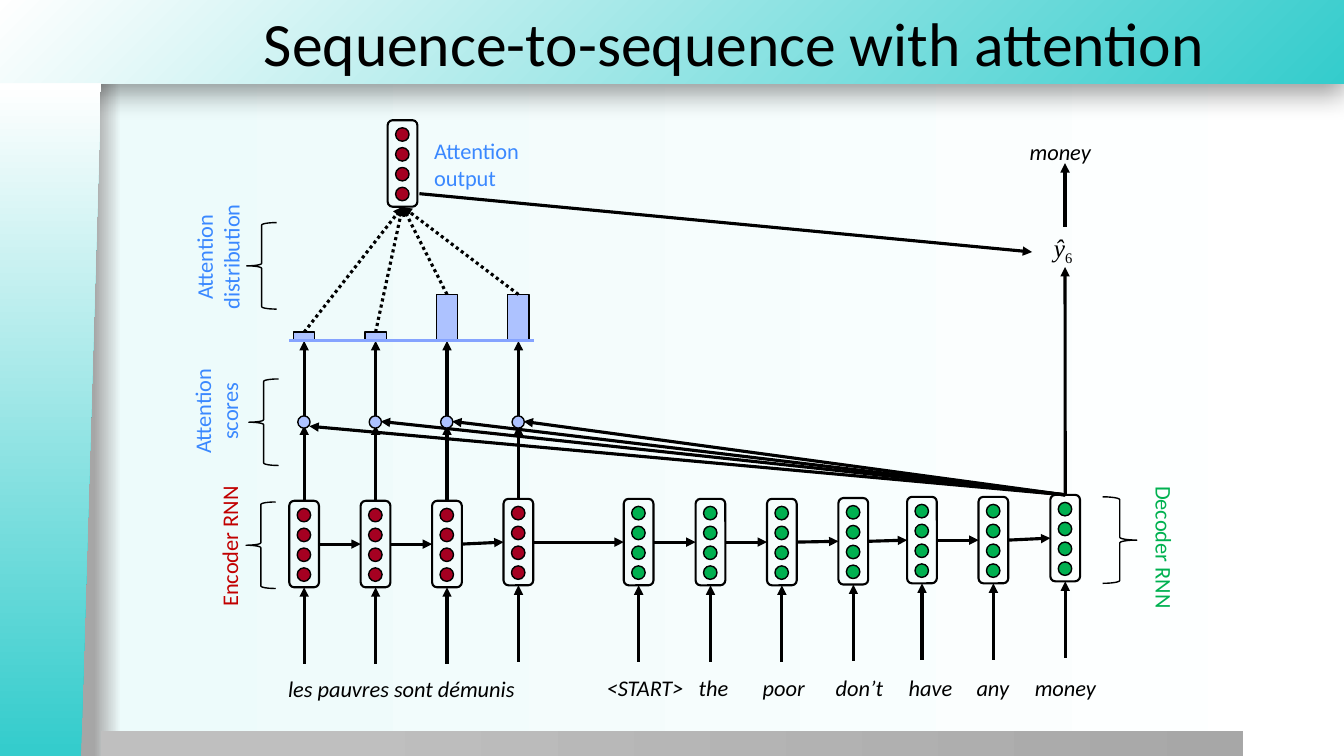
"""Build a slide explaining sequence-to-sequence translation with attention."""
from lxml.etree import SubElement
from pptx import Presentation
from pptx.dml.color import RGBColor
from pptx.enum.dml import MSO_LINE
from pptx.enum.shapes import MSO_CONNECTOR, MSO_SHAPE as SHAPE
from pptx.enum.text import MSO_ANCHOR as ANCHOR, PP_ALIGN as ALIGN
from pptx.oxml import parse_xml
from pptx.oxml.ns import nsdecls, qn
from pptx.util import Cm, Pt

COLORS = {
    "black": "000000", "white": "FFFFFF", "teal": "34CCCC", "mist": "EDFBFB",
    "shade": "A6A6A6", "silver": "BFBFBF", "gray": "A7A7A7",
    "encoder": "A50021", "decoder": "00B050", "encoder text": "C10000",
    "decoder text": "00B150", "attention": "3A88FF", "score": "ADC2FF", "axis": "85A3FF",
}
TOP, LEFT, BOTTOM, RIGHT = range(4)
BOX_WIDTH, BOX_HEIGHT = 0.75, 2.18
PITCH = 1.8

deck = Presentation()
deck.slide_width, deck.slide_height = Cm(33.87), Cm(19.05)
page = deck.slides.add_slide(deck.slide_layouts[6])


def draw(kind, left, top, width, height, fill=None, line="black", weight=1.0):
    shape = page.shapes.add_shape(kind, Cm(left), Cm(top), Cm(width), Cm(height))
    shape.shadow.inherit = False
    if fill:
        shape.fill.solid()
        shape.fill.fore_color.rgb = RGBColor.from_string(COLORS[fill])
    else:
        shape.fill.background()
    if line:
        shape.line.color.rgb = RGBColor.from_string(COLORS[line])
        shape.line.width = Pt(weight)
    else:
        shape.line.fill.background()
    return shape


def write(text, left, top, width, height, size=16, color="black", font="Calibri", italic=False,
          align=ALIGN.LEFT, anchor=ANCHOR.TOP, wrap=True, turn=0, subscript=""):
    box = page.shapes.add_textbox(Cm(left), Cm(top), Cm(width), Cm(height))
    box.rotation = turn
    frame = box.text_frame
    frame.word_wrap = wrap
    frame.vertical_anchor = anchor
    for number, content in enumerate(text.split("\n")):
        para = frame.add_paragraph() if number else frame.paragraphs[0]
        para.alignment = align
        for part in filter(None, (content, subscript)):
            span = para.add_run()
            span.text = part
            span.font.name, span.font.size = font, Pt(size)
            span.font.color.rgb = RGBColor.from_string(COLORS[color])
            span.font.italic = italic and part != subscript
            if part == subscript:
                span.font._element.set("baseline", "-25000")
    return box


page.background.fill.solid()
backdrop = page._element.find(".//" + qn("p:bgPr"))
banner = draw(SHAPE.RECTANGLE, -0.03, 0, 33.9, 2.11, "teal", None)
footer = draw(SHAPE.RECTANGLE, 2.54, 18.42, 28.78, 0.66, "gray", None)
side = draw(SHAPE.FLOWCHART_MANUAL_INPUT, -7.21, 9.32, 16.97, 2.54, "teal", None)
side.rotation = 270
side._element.spPr.xfrm.set("flipV", "1")

linear = '<a:lin ang="0" scaled="0"/>'
corner = '<a:path path="circle"><a:fillToRect l="100000" t="100000"/></a:path>'
for owner, stops, direction in (
    (backdrop, ((7, "shade"), (9, "mist"), (100, "white")), linear),
    (banner._element.spPr, ((0, "teal"), (100, "white")), corner),
    (footer._element.spPr, ((20, "silver"), (100, "gray")), linear),
    (side._element.spPr, ((1, "teal"), (100, "white")), linear),
):
    marks = "".join(f'<a:gs pos="{place * 1000}"><a:srgbClr val="{COLORS[name]}"/></a:gs>'
                    for place, name in stops)
    gradient = parse_xml(f'<a:gradFill {nsdecls("a")} rotWithShape="1">'
                         f'<a:gsLst>{marks}</a:gsLst>{direction}</a:gradFill>')
    owner.replace(owner.find(qn("a:solidFill")), gradient)

shadow = SubElement(banner._element.spPr.find(qn("a:effectLst")), qn("a:outerShdw"),
                    blurRad=str(Pt(20)), dist=str(Pt(6)), dir="5400000", rotWithShape="0")
shade = SubElement(shadow, qn("a:srgbClr"), val=COLORS["black"])
SubElement(shade, qn("a:alpha"), val="40000")

write("Sequence-to-sequence with attention", 6.4, 0, 27.5, 2.11, size=44, anchor=ANCHOR.MIDDLE)

encoder_tops = (12.62, 12.62, 12.62, 12.57)
decoder_lefts = (15.72, 17.53, 19.33, 21.13, 22.86, 24.66, 26.47)
decoder_tops = (12.57, 12.57, 12.57, 12.55, 12.52, 12.52, 12.47)
cells = [(7.29 + PITCH * step, top, "encoder") for step, top in enumerate(encoder_tops)]
cells += [(left, top, "decoder") for left, top in zip(decoder_lefts, decoder_tops)]
cells.append((9.77, 3.03, "encoder"))
boxes = []
for left, top, color in cells:
    boxes.append(draw(SHAPE.ROUNDED_RECTANGLE, left, top, BOX_WIDTH, BOX_HEIGHT, weight=1.5))
    for dot in range(4):
        draw(SHAPE.OVAL, left + 0.2, top + 0.19 + 0.5 * dot, 0.34, 0.34, color)
*states, output = boxes
last_state = states[-1]
centers = [left + BOX_WIDTH / 2 for left, top, color in cells]

arrows = []
for state, center, (left, top, color) in zip(states, centers, cells):
    bottom = top + BOX_HEIGHT
    arrows.append(((center, bottom + 1.92), (state, BOTTOM), "solid"))
for state, following in zip(states, states[1:]):
    arrows.append(((state, RIGHT), (following, LEFT), "solid"))

for state, center, height in zip(states, centers, (0.22, 0.22, 1.17, 1.17)):
    bar = draw(SHAPE.RECTANGLE, center - 0.27, 8.59 - height, 0.54, height, "score")
    arrows += [
        ((state, TOP), (center, 10.72), "solid"),
        ((center, 10.49), (center, 8.59), "solid"),
        ((bar, TOP), (output, BOTTOM), "dotted"),
        ((last_state, TOP), (center + 0.13, 10.74 if state is states[0] else 10.62), "solid"),
    ]
arrows += [
    ((last_state, TOP), (26.84, 6.73), "solid"),
    ((26.84, 5.72), (26.84, 4.11), "solid"),
    ((10.57, 4.88), (26.01, 6.35), "solid"),
    ((7.29, 8.59), (13.46, 8.59), "axis"),
]
for start, end, style in arrows:
    arrow = page.shapes.add_connector(MSO_CONNECTOR.STRAIGHT, 0, 0, 0, 0)
    if hasattr(start[0], "shape_id"):
        arrow.begin_connect(*start)
    else:
        arrow.begin_x, arrow.begin_y = Cm(start[0]), Cm(start[1])
    if hasattr(end[0], "shape_id"):
        arrow.end_connect(*end)
    else:
        arrow.end_x, arrow.end_y = Cm(end[0]), Cm(end[1])
    arrow.line.width = Pt(2.25)
    arrow.line.color.rgb = RGBColor.from_string(COLORS["axis" if style == "axis" else "black"])
    if style == "dotted":
        arrow.line.dash_style = MSO_LINE.ROUND_DOT
    if style != "axis":
        SubElement(arrow.line._get_or_add_ln(), qn("a:tailEnd"), type="triangle")
    SubElement(arrow._element.spPr, qn("a:effectLst"))

for center in centers[:4]:
    draw(SHAPE.OVAL, center - 0.16, 10.48, 0.31, 0.31, "score")

for left, top in ((6.2, 12.65), (6.27, 9.55), (6.22, 5.61)):
    draw(SHAPE.LEFT_BRACE, left, top, 0.75, BOX_HEIGHT)
draw(SHAPE.RIGHT_BRACE, 27.79, 12.52, 0.86, BOX_HEIGHT)

write("Encoder RNN", 3.99, 13.28, 3.58, 0.94, color="encoder text", wrap=False, turn=270)
write("Decoder RNN", 27.51, 13.36, 3.66, 0.94, color="decoder text", wrap=False, turn=90)
write("Attention\noutput", 10.69, 3.33, 2.72, 1.63, color="attention")
write("Attention\nscores", 4.09, 9.55, 2.72, 1.63, color="attention", align=ALIGN.CENTER, turn=270)
write("Attention\ndistribution", 3.89, 5.66, 3.2, 1.63, color="attention",
      align=ALIGN.CENTER, turn=270)
write("ŷ", 26.31, 5.72, 1.02, 1.02, size=18, font="Times New Roman", italic=True,
      wrap=False, subscript="6")
write("money", 25.7, 3.35, 2.24, 0.94, italic=True, wrap=False)
write("les pauvres sont démunis", 7.01, 16.89, 6.99, 0.94, italic=True, wrap=False)
target = write("<START>\tthe\tpoor\tdon’t\thave\tany\tmoney", 15.04, 16.87, 13.41, 0.94, italic=True)
tabs = SubElement(target.text_frame.paragraphs[0]._p.get_or_add_pPr(), qn("a:tabLst"))
for stop in (2.32, 3.93, 5.77, 7.61, 9.32, 10.79):
    SubElement(tabs, qn("a:tab"), pos=str(Cm(stop)), algn="l")

deck.save("out.pptx")
